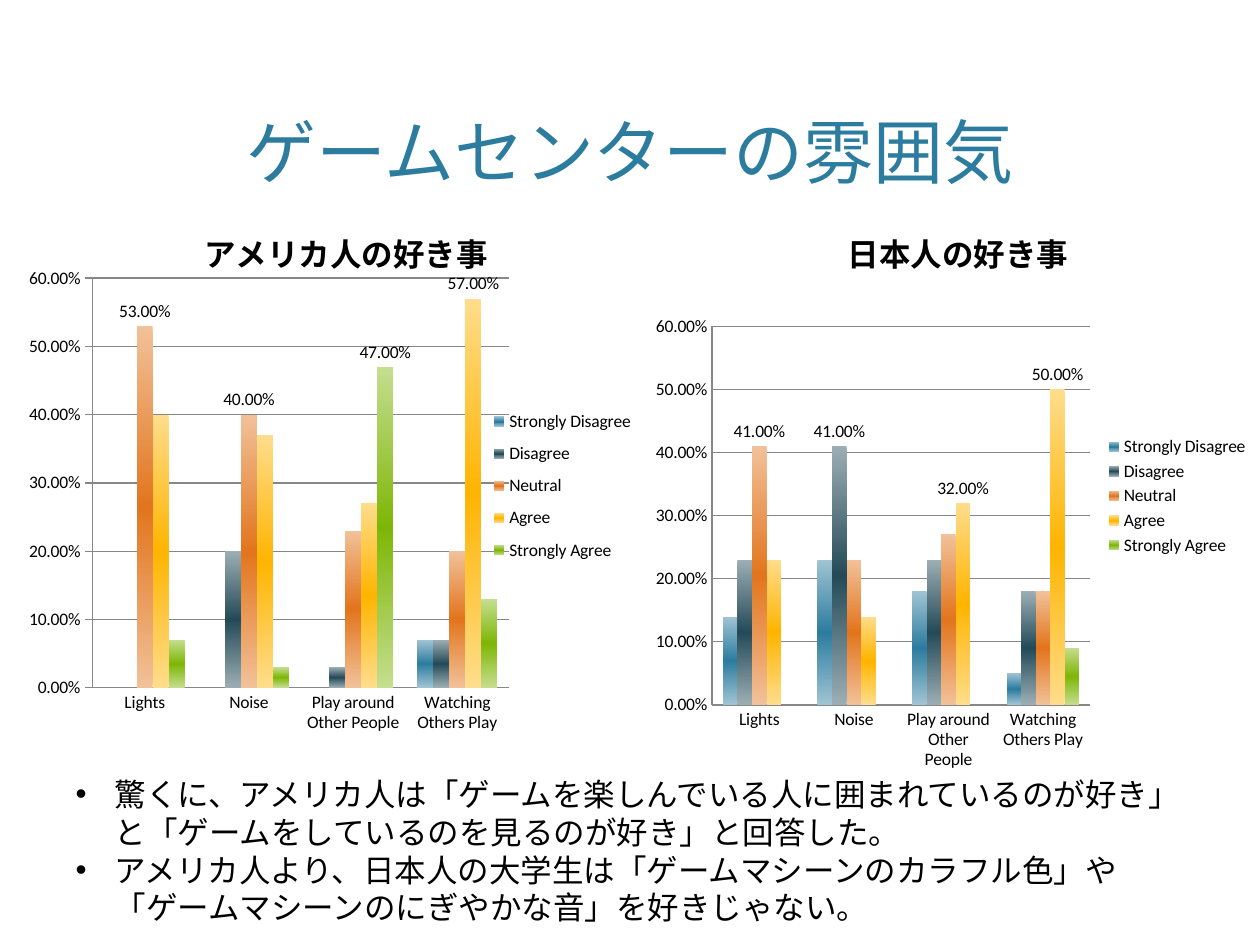
from lxml import etree
from pptx import Presentation
from pptx.chart.data import CategoryChartData
from pptx.dml.color import RGBColor
from pptx.enum import chart as ch, text as tx
from pptx.oxml import parse_xml
from pptx.oxml.ns import nsdecls, qn
from pptx.util import Inches, Pt

FONT = "Calibri"
BLACK = RGBColor(0x00, 0x00, 0x00)
BLUE = RGBColor(0x2C, 0x7C, 0x9F)
SLATE = RGBColor(0x24, 0x4A, 0x58)
ORANGE = RGBColor(0xE2, 0x75, 0x1D)
YELLOW = RGBColor(0xFF, 0xB4, 0x00)
GREEN = RGBColor(0x7E, 0xB6, 0x06)
GRID = RGBColor(0x87, 0x87, 0x87)

TOPICS = ["Lights", "Noise", "Play around Other People", "Watching Others Play"]
ANSWERS = {"Strongly Disagree": BLUE, "Disagree": SLATE, "Neutral": ORANGE,
           "Agree": YELLOW, "Strongly Agree": GREEN}


def write(paragraph, words, size=18, color=BLACK, bold=False, align=None):
    paragraph.alignment = align
    run = paragraph.add_run()
    run.text = words
    run.font.size, run.font.bold, run.font.name = Pt(size), bold, FONT
    run.font.color.rgb = color


def place(parent, index, x, y, w=None, h=None, inner=False):
    """Put a manual layout, in fractions of the chart, at a child index of parent."""
    for old in parent.findall(qn("c:layout")):
        parent.remove(old)
    layout = parse_xml(f"<c:layout {nsdecls('c')}><c:manualLayout/></c:layout>")
    settings = [("layoutTarget", "inner" if inner else None), ("xMode", "edge"),
                ("yMode", "edge"), ("x", x), ("y", y), ("w", w), ("h", h)]
    for tag, value in settings:
        if value is not None:
            etree.SubElement(layout[0], qn(f"c:{tag}")).set("val", str(value))
    parent.insert(index, layout)


prs = Presentation()
prs.slide_width, prs.slide_height = Inches(10), Inches(7.5)
slide = prs.slides.add_slide(prs.slide_layouts[1])

heading, findings = slide.placeholders
heading.left, heading.top = Inches(0.6), Inches(0.12)
heading.width, heading.height = Inches(8.8), Inches(1.46)
heading.text_frame.vertical_anchor = tx.MSO_ANCHOR.BOTTOM
write(heading.text_frame.paragraphs[0], "ゲームセンターの雰囲気", size=40, color=BLUE,
      align=tx.PP_ALIGN.CENTER)

# Each survey: box, answers by topic, labelled topics by answer, and layout
surveys = [
    dict(name="アメリカ人の好き事", box=(0, 1.75, 5.25, 4.58),
         shares=[(0, 0, 0, 0.07), (0, 0.2, 0.03, 0.07), (0.53, 0.4, 0.23, 0.2),
                 (0.4, 0.37, 0.27, 0.57), (0.07, 0.03, 0.47, 0.13)],
         labelled={"Neutral": [0, 1], "Agree": [3], "Strongly Agree": [2]},
         tick=ch.XL_TICK_MARK.OUTSIDE, title=(0.3, 0),
         plot=(0.14, 0.1, 0.63, 0.71), legend=(0.72, 0.31, 0.26, 0.3)),
    dict(name="日本人の好き事", box=(5.11, 1.75, 4.92, 4.42),
         shares=[(0.14, 0.23, 0.18, 0.05), (0.23, 0.41, 0.23, 0.18),
                 (0.41, 0.23, 0.27, 0.18), (0.23, 0.14, 0.32, 0.5), (0, 0, 0, 0.09)],
         labelled={"Disagree": [1], "Neutral": [0], "Agree": [2, 3]},
         tick=ch.XL_TICK_MARK.NONE, title=(0.32, 0),
         plot=(0.11, 0.19, 0.61, 0.68), legend=(0.73, 0.38, 0.26, 0.23)),
]

for survey in surveys:
    data = CategoryChartData(number_format="0.00%")
    data.categories = TOPICS
    for answer, shares in zip(ANSWERS, survey["shares"]):
        data.add_series(answer, shares)
    chart = slide.shapes.add_chart(ch.XL_CHART_TYPE.COLUMN_CLUSTERED,
                                   *map(Inches, survey["box"]), data).chart
    chart.font.size, chart.font.name = Pt(10), FONT
    chart.font.color.rgb = BLACK

    chart.has_title = True
    write(chart.chart_title.text_frame.paragraphs[0], survey["name"], bold=True)
    chart.has_legend = True
    chart.legend.position = ch.XL_LEGEND_POSITION.RIGHT
    chart.legend.include_in_layout = False
    place(chart.chart_title._element, 1, *survey["title"])
    place(chart.legend._element, 1, *survey["legend"])
    place(chart._chartSpace.chart.plotArea, 0, *survey["plot"], inner=True)

    shares_axis, topics_axis = chart.value_axis, chart.category_axis
    shares_axis.minimum_scale, shares_axis.maximum_scale = 0, 0.6
    shares_axis.major_unit = 0.1
    shares_axis.major_tick_mark = survey["tick"]
    topics_axis.major_tick_mark = ch.XL_TICK_MARK.NONE
    shares_axis.tick_labels.number_format = "0.00%"
    shares_axis.tick_labels.number_format_is_linked = False
    for line in (shares_axis.format.line, topics_axis.format.line,
                 shares_axis.major_gridlines.format.line):
        line.color.rgb, line.width = GRID, Pt(0.75)

    bars = chart.plots[0]
    bars.gap_width, bars.overlap, bars.vary_by_categories = 150, 0, False
    for series in bars.series:
        color = ANSWERS[series.name]
        pale = RGBColor(*(round(part + (255 - part) * 0.55) for part in color))
        series.format.fill.solid()
        solid = series._element.spPr.find(qn("a:solidFill"))
        stops = "".join(f'<a:gs pos="{pos}"><a:srgbClr val="{shade}"/></a:gs>'
                        for pos, shade in ((0, pale), (50000, color), (100000, pale)))
        series._element.spPr.replace(solid, parse_xml(
            f"<a:gradFill {nsdecls('a')}><a:gsLst>{stops}</a:gsLst>"
            '<a:lin ang="5400000" scaled="0"/></a:gradFill>'))
        for topic in survey["labelled"].get(series.name, []):
            series.data_labels.show_value = False
            label = series.points[topic].data_label
            label.position = ch.XL_LABEL_POSITION.OUTSIDE_END

findings.left, findings.top = Inches(0.5), Inches(6.1)
findings.width, findings.height = Inches(9), Inches(1.31)
frame = findings.text_frame
frame.auto_size = tx.MSO_AUTO_SIZE.NONE
remarks = [
    "驚くに、アメリカ人は「ゲームを楽しんでいる人に囲まれているのが好き」と「ゲームをしているのを見るのが好き」と回答した。",
    "アメリカ人より、日本人の大学生は「ゲームマシーンのカラフル色」や「ゲームマシーンのにぎやかな音」を好きじゃない。",
]
for i, remark in enumerate(remarks):
    paragraph = frame.add_paragraph() if i else frame.paragraphs[0]
    write(paragraph, remark)
    paragraph.space_before = Pt(0)
    props = paragraph._p.get_or_add_pPr()
    props.set("marL", str(Inches(0.31)))
    props.set("indent", str(-Inches(0.31)))

prs.save("out.pptx")
